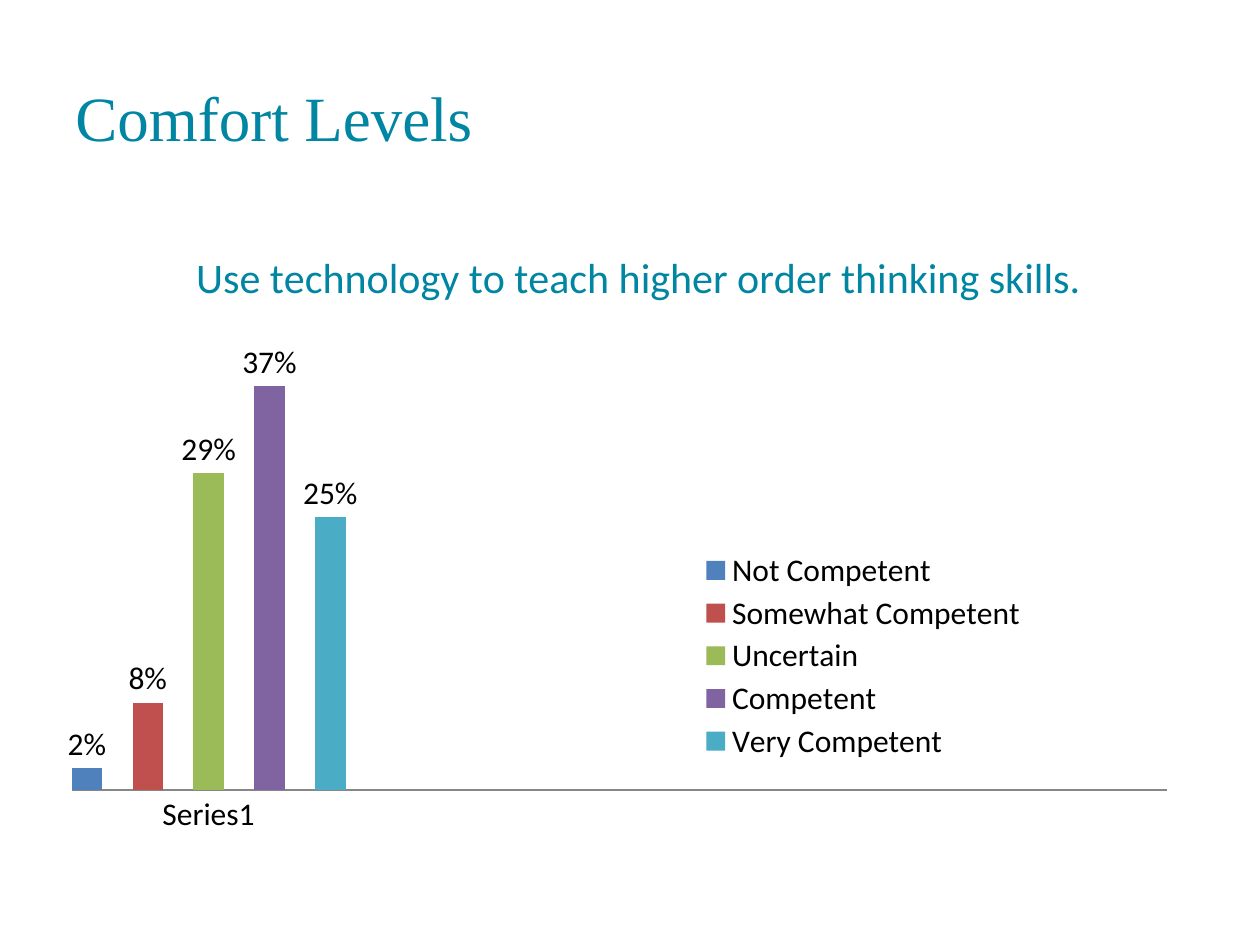
import pptx
import pptx.chart.data
import pptx.dml.color
import pptx.enum.chart
import pptx.enum.text
import pptx.oxml
import pptx.oxml.ns
import pptx.util
from dataclasses import dataclass

Pt = pptx.util.Pt
enum = pptx.enum.chart


@dataclass(frozen=True)
class Theme:
    teal: str = "0085A2"
    ink: str = "000000"
    axis: str = "878787"
    serif: str = "Times New Roman"
    sans: str = "Calibri"
    head: int = 36
    sub: int = 24
    body: int = 18


THEME = Theme()
LEVELS = [
    ("Not Competent", 0.02, "4F81BD"),
    ("Somewhat Competent", 0.08, "C0504D"),
    ("Uncertain", 0.29, "9BBB59"),
    ("Competent", 0.37, "8064A2"),
    ("Very Competent", 0.25, "4BACC6"),
]
GROUPS = ["Series1", "", "", ""]


def rgb(code):
    return pptx.dml.color.RGBColor.from_string(code)


def style(font, face, size, color):
    font.name = face
    font.size = Pt(size)
    font.bold = False
    font.color.rgb = rgb(color)


def place(parent, index, inner=False, **spots):
    tag = pptx.oxml.ns.qn("c:layout")
    for old in parent.findall(tag):
        parent.remove(old)
    rules = [("layoutTarget", "inner")] if inner else []
    rules += [("xMode", "edge"), ("yMode", "edge"), *spots.items()]
    body = "".join(f'<c:{key} val="{val}"/>' for key, val in rules)
    space = pptx.oxml.ns.nsdecls("c")
    layout = pptx.oxml.parse_xml(
        f"<c:layout {space}><c:manualLayout>{body}</c:manualLayout></c:layout>"
    )
    parent.insert(index, layout)


def add_title(slide, box, text):
    frame = slide.shapes.add_textbox(*map(Pt, box)).text_frame
    frame.word_wrap = True
    frame.vertical_anchor = pptx.enum.text.MSO_ANCHOR.MIDDLE
    run = frame.paragraphs[0].add_run()
    run.text = text
    style(run.font, THEME.serif, THEME.head, THEME.teal)


def add_chart(slide, box, text):
    data = pptx.chart.data.CategoryChartData(number_format="0%")
    data.categories = GROUPS
    for name, share, _ in LEVELS:
        data.add_series(name, [share] + [None] * (len(GROUPS) - 1))
    kind = enum.XL_CHART_TYPE.COLUMN_CLUSTERED
    chart = slide.shapes.add_chart(kind, *map(Pt, box), data).chart
    style(chart.font, THEME.sans, THEME.body, THEME.ink)

    chart.has_title = True
    run = chart.chart_title.text_frame.paragraphs[0].add_run()
    run.text = text
    style(run.font, THEME.sans, THEME.sub, THEME.teal)
    root = chart._chartSpace.chart
    place(root.find(pptx.oxml.ns.qn("c:title")), 1, x=0.12, y=0.05)
    place(root.plotArea, 0, inner=True, x=0.017, y=0.23, w=0.966, h=0.7)

    plot = chart.plots[0]
    plot.gap_width = 0
    plot.overlap = -100
    plot.vary_by_categories = False
    for series, (_, _, color) in zip(plot.series, LEVELS):
        series.format.fill.solid()
        series.format.fill.fore_color.rgb = rgb(color)
        labels = series.data_labels
        labels.show_value = True
        labels.number_format = "0%"
        labels.number_format_is_linked = False
        labels.position = enum.XL_LABEL_POSITION.OUTSIDE_END
        style(labels.font, THEME.sans, THEME.body, THEME.ink)

    base = chart.category_axis
    base.major_tick_mark = enum.XL_TICK_MARK.NONE
    base.format.line.color.rgb = rgb(THEME.axis)
    scale = chart.value_axis
    scale.visible = False
    scale.has_major_gridlines = False
    scale.minimum_scale, scale.maximum_scale = 0, 0.4

    chart.has_legend = True
    key = chart.legend
    key.position = enum.XL_LEGEND_POSITION.BOTTOM
    key.include_in_layout = False
    style(key.font, THEME.sans, THEME.body, THEME.ink)
    place(key._element, 1, x=0.57, y=0.54, w=0.29, h=0.35)


def main():
    deck = pptx.Presentation()
    deck.slide_width, deck.slide_height = Pt(720), Pt(540)
    slide = deck.slides.add_slide(deck.slide_layouts[6])
    add_title(slide, (36, 21.6, 591, 90), "Comfort Levels")
    add_chart(
        slide,
        (30, 120, 648, 356.4),
        "Use technology to teach higher order thinking skills.",
    )
    deck.save("out.pptx")


if __name__ == "__main__":
    main()
